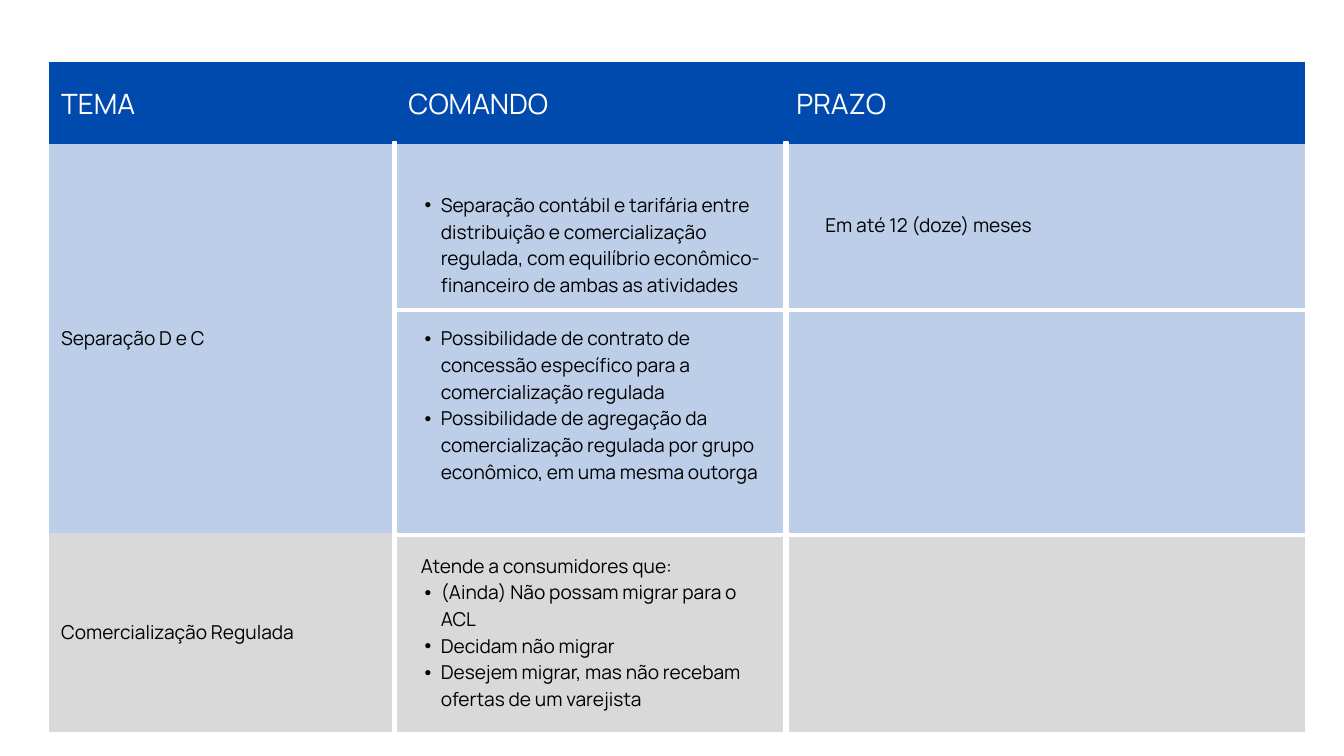
import dataclasses

import lxml.etree
import pptx
import pptx.dml.color
import pptx.enum.shapes
import pptx.enum.text
import pptx.oxml.ns
import pptx.util

Cm, Pt = pptx.util.Cm, pptx.util.Pt
RGB = pptx.dml.color.RGBColor.from_string
qn = pptx.oxml.ns.qn


@dataclasses.dataclass(frozen=True)
class Theme:
    font: str = "Manrope"
    header_size: float = 30
    header_leading: float = 42
    body_size: float = 20.5
    body_leading: float = 28.6
    white: str = "FFFFFF"
    black: str = "000000"
    blue: str = "004AAD"
    light_blue: str = "BCCEE8"
    grey: str = "D9D9D9"


@dataclasses.dataclass(frozen=True)
class Box:
    left: float
    top: float
    width: float
    height: float


THEME = Theme()
PAGE_WIDTH, PAGE_HEIGHT = 50.8, 28.58
COLUMNS = [13.13, 14.66, 19.68]
ROWS = [3.07, 14.71, 7.52]
INSET = 0.46

# Each cell is a list of (text, kind) paragraphs
CELLS = [
    [[("TEMA", "plain")], [("COMANDO", "plain")], [("PRAZO", "plain")]],
    [
        [("Separação D e C", "plain")],
        [
            ("Separação contábil e tarifária entre distribuição e comercialização "
             "regulada, com equilíbrio econômico-financeiro de ambas as atividades", "bullet"),
            ("Possibilidade de contrato de concessão específico para a "
             "comercialização regulada", "spaced bullet"),
            ("Possibilidade de agregação da comercialização regulada por grupo "
             "econômico, em uma mesma outorga", "bullet"),
        ],
        [],
    ],
    [
        [("Comercialização Regulada", "plain")],
        [
            ("Atende a consumidores que:", "indented"),
            ("(Ainda) Não possam migrar para o ACL", "bullet"),
            ("Decidam não migrar", "bullet"),
            ("Desejem migrar, mas não recebam ofertas de um varejista", "bullet"),
        ],
        [],
    ],
]


def style_para(para, size, leading, colour):
    para.font.name = THEME.font
    para.font.size = Pt(size)
    para.font.color.rgb = RGB(colour)
    para.line_spacing = Pt(leading)


def indent_para(para, kind):
    props = para._p.get_or_add_pPr()
    if kind == "indented":
        props.set("marL", str(Cm(0.47)))
    elif kind.endswith("bullet"):
        if kind == "spaced bullet":
            para.space_before = Pt(THEME.body_leading)
        props.set("marL", str(Cm(1.22)))
        props.set("indent", str(Cm(-0.61)))
        bullet_font = lxml.etree.Element(qn("a:buFont"), typeface="Arial")
        bullet = lxml.etree.Element(qn("a:buChar"), char="•")
        # Bullets come after spacing and before default run properties
        run_defaults = props.find(qn("a:defRPr"))
        run_defaults.addprevious(bullet_font)
        run_defaults.addprevious(bullet)


def remove_borders(cell):
    props = cell._tc.get_or_add_tcPr()
    for index, side in enumerate(("lnL", "lnR", "lnT", "lnB")):
        border = lxml.etree.Element(qn("a:" + side), w="0")
        lxml.etree.SubElement(border, qn("a:noFill"))
        props.insert(index, border)


def fill_cell(cell, paragraphs, fill, text_style):
    cell.fill.solid()
    cell.fill.fore_color.rgb = RGB(fill)
    remove_borders(cell)
    cell.vertical_anchor = pptx.enum.text.MSO_ANCHOR.MIDDLE
    cell.margin_left = cell.margin_right = Cm(INSET)
    cell.margin_top = cell.margin_bottom = Cm(INSET)
    for index, (text, kind) in enumerate(paragraphs):
        frame = cell.text_frame
        para = frame.add_paragraph() if index else frame.paragraphs[0]
        para.text = text
        style_para(para, *text_style)
        indent_para(para, kind)


def add_themes_table(page, box):
    frame = page.shapes.add_table(len(ROWS), len(COLUMNS), Cm(box.left), Cm(box.top),
                                  Cm(box.width), Cm(box.height))
    table = frame.table
    table.first_row = table.horz_banding = False
    for column, width in zip(table.columns, COLUMNS):
        column.width = Cm(width)
    for row, height in zip(table.rows, ROWS):
        row.height = Cm(height)

    header = (THEME.header_size, THEME.header_leading, THEME.white)
    body = (THEME.body_size, THEME.body_leading, THEME.black)
    row_styles = [(THEME.blue, header), (THEME.light_blue, body), (THEME.grey, body)]
    for row, contents, (fill, text_style) in zip(table.rows, CELLS, row_styles):
        for cell, paragraphs in zip(row.cells, contents):
            fill_cell(cell, paragraphs, fill, text_style)


def add_row_rule(page, box, offset):
    """White rule from the second column to the page edge."""
    y = Cm(box.top + offset)
    rule = page.shapes.add_connector(pptx.enum.shapes.MSO_CONNECTOR.STRAIGHT,
                                     Cm(box.left + COLUMNS[0]), y, Cm(PAGE_WIDTH), y)
    rule.line.color.rgb = RGB(THEME.white)
    rule.line.width = Pt(3.75)
    lxml.etree.SubElement(rule._element.spPr, qn("a:effectLst"))


def add_column_bar(page, box, offset):
    """White bar from below the header to the page edge."""
    top = box.top + ROWS[0] - 0.05
    bar = page.shapes.add_shape(pptx.enum.shapes.MSO_SHAPE.RECTANGLE, Cm(box.left + offset),
                                Cm(top), Cm(0.13), Cm(PAGE_HEIGHT - top))
    bar.shadow.inherit = False
    bar.fill.solid()
    bar.fill.fore_color.rgb = RGB(THEME.white)
    bar.line.color.rgb = RGB(THEME.white)
    bar.line.width = Pt(2)


def add_deadline(page, box):
    label = page.shapes.add_textbox(Cm(box.left), Cm(box.top), Cm(box.width), Cm(box.height))
    frame = label.text_frame
    frame.word_wrap = True
    frame.margin_left = frame.margin_right = frame.margin_top = frame.margin_bottom = 0
    para = frame.paragraphs[0]
    para.text = "Em até 12 (doze) meses"
    para.alignment = pptx.enum.text.PP_ALIGN.CENTER
    style_para(para, THEME.body_size, THEME.body_leading, THEME.black)


def build_page(page):
    box = Box(1.85, 2.36, sum(COLUMNS), sum(ROWS))
    add_themes_table(page, box)
    # Separators between commands and between themes
    add_row_rule(page, box, 9.35)
    add_deadline(page, Box(box.left + 28.88, box.top + 5.56, 8.74, 1.02))
    for offset in (COLUMNS[0] - 0.12, COLUMNS[0] + COLUMNS[1]):
        add_column_bar(page, box, offset)
    add_row_rule(page, box, ROWS[0] + ROWS[1] + 0.08)


def main():
    deck = pptx.Presentation()
    deck.slide_width, deck.slide_height = Cm(PAGE_WIDTH), Cm(PAGE_HEIGHT)
    build_page(deck.slides.add_slide(deck.slide_layouts[6]))
    deck.save("out.pptx")


if __name__ == "__main__":
    main()
